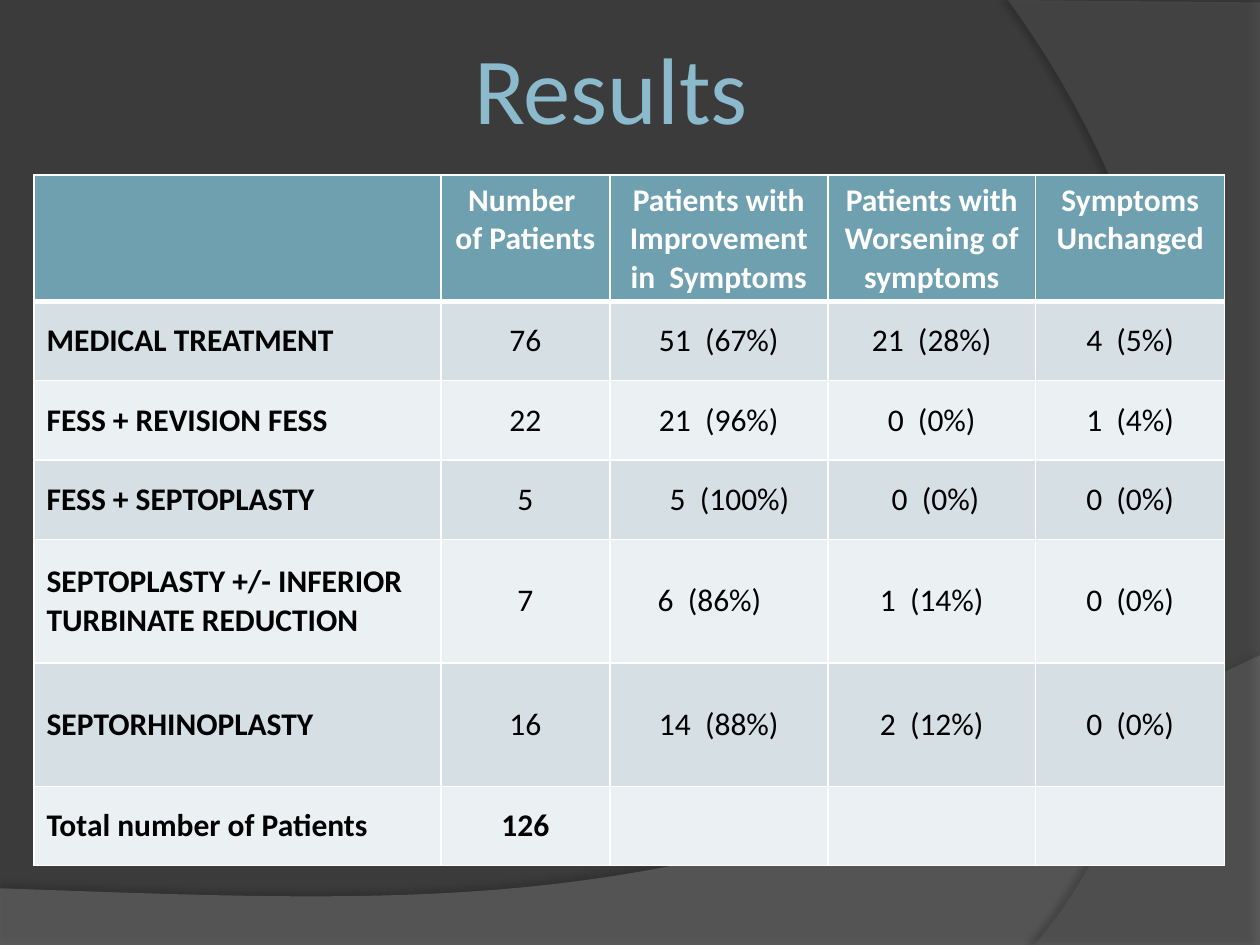
from dataclasses import dataclass

from lxml import etree
from pptx import Presentation
from pptx import util as u
from pptx.dml import color
from pptx.enum import text
from pptx.oxml import ns

BACKGROUND = color.RGBColor(0x3B, 0x3B, 0x3B)
WAVE_GRAY = color.RGBColor(0x7F, 0x7F, 0x7F)
ARC_GRAY = color.RGBColor(0x5E, 0x5E, 0x5E)
TITLE_BLUE = color.RGBColor(0x8A, 0xBA, 0xCB)
HEADER_TEAL = color.RGBColor(0x6E, 0xA0, 0xB0)
BAND_DARK = color.RGBColor(0xD5, 0xDF, 0xE4)
BAND_LIGHT = color.RGBColor(0xEB, 0xF0, 0xF2)
WHITE = color.RGBColor(0xFF, 0xFF, 0xFF)
BLACK = color.RGBColor(0, 0, 0)

CENTER, LEFT = text.PP_ALIGN.CENTER, text.PP_ALIGN.LEFT
CURVE_STEPS = 60
COLUMN_WIDTHS = (3.23, 1.34, 1.73, 1.65, 1.5)
ROW_HEIGHTS = (1, 0.63, 0.63, 0.63, 0.98, 0.98, 0.63)
ROWS = (
    ("", "Number \nof Patients", "Patients with Improvement in  Symptoms",
     "Patients with Worsening of symptoms", "Symptoms Unchanged"),
    ("MEDICAL TREATMENT", "76", "51  (67%)", "21  (28%)", "4  (5%)"),
    ("FESS + REVISION FESS", "22", "21  (96%)", "0  (0%)", "1  (4%)"),
    ("FESS + SEPTOPLASTY", "5", "5  (100%)", "0  (0%)", "0  (0%)"),
    ("SEPTOPLASTY +/- INFERIOR TURBINATE REDUCTION", "7", "6  (86%)", "1  (14%)", "0  (0%)"),
    ("SEPTORHINOPLASTY", "16", "14  (88%)", "2  (12%)", "0  (0%)"),
    ("Total number of Patients", "126", "", "", ""),
)
INDENTS = {(3, 2): 0.17, (3, 3): 0.06, (4, 2): 0.28}
LEFT_ALIGNED = {(4, 2)}

Point = tuple[float, float]


@dataclass
class Swoosh:
    corners: list[Point]
    curve: tuple[Point, Point, Point]
    fill: color.RGBColor
    opacity: int
    shadow_opacity: int
    shadow_distance: float
    shadow_angle: int


SWOOSHES = (
    Swoosh([(0, 7.05), (0, 7.51), (10, 7.51), (10, 5.2)],
           ((5.59, 7.29), (3.91, 7.19), (0, 7.05)), WAVE_GRAY, 45, 35, 3.5, 270),
    Swoosh([(10, 0.02), (10, 7.5), (8.21, 7.5)],
           ((9.35, 6.19), (10.18, 3), (8, 0)), ARC_GRAY, 40, 45, 4, 180),
)


def add_node(parent, tag: str, **attributes):
    node = etree.SubElement(parent, ns.qn(tag))
    for name, value in attributes.items():
        node.set(name, str(value))
    return node


def curve_points(start: Point, curve: tuple[Point, Point, Point]) -> list[Point]:
    points = []
    for step in range(1, CURVE_STEPS + 1):
        t = step / CURVE_STEPS
        weights = ((1 - t) ** 3, 3 * t * (1 - t) ** 2, 3 * t * t * (1 - t), t ** 3)
        controls = (start, *curve)
        points.append(tuple(sum(w * c[axis] for w, c in zip(weights, controls))
                            for axis in (0, 1)))
    return points


def draw_swoosh(page, swoosh: Swoosh) -> None:
    outline = swoosh.corners + curve_points(swoosh.corners[-1], swoosh.curve)
    first, *others = [(u.Inches(x), u.Inches(y)) for x, y in outline]
    builder = page.shapes.build_freeform(*first, scale=1.0)
    builder.add_line_segments(others, close=True)
    shape = builder.convert_to_shape()
    shape.fill.solid()
    shape.fill.fore_color.rgb = swoosh.fill
    shape.line.fill.background()
    shape.shadow.inherit = False
    properties = shape._element.spPr
    fill_color = properties.find(ns.qn("a:solidFill"))[0]
    add_node(fill_color, "a:alpha", val=swoosh.opacity * 1000)
    shadow = add_node(properties.find(ns.qn("a:effectLst")), "a:outerShdw",
                      blurRad=u.Pt(4), dist=u.Pt(swoosh.shadow_distance),
                      dir=swoosh.shadow_angle * 60000, algn="ctr", rotWithShape=0)
    shadow_color = add_node(shadow, "a:srgbClr", val="000000")
    add_node(shadow_color, "a:alpha", val=swoosh.shadow_opacity * 1000)


def style_paragraphs(frame, alignment, indent: float, rgb: color.RGBColor, font: dict) -> None:
    for para in frame.paragraphs:
        para.alignment = alignment
        if indent:
            para._p.get_or_add_pPr().set("marL", str(u.Inches(indent)))
        for span in para.runs:
            for name, value in font.items():
                setattr(span.font, name, value)
            span.font.color.rgb = rgb


def draw_title(page) -> None:
    box = page.shapes.add_textbox(u.Inches(0.5), u.Inches(0.3), u.Inches(8.17), u.Inches(0.77))
    frame = box.text_frame
    layout = {"word_wrap": True, "vertical_anchor": text.MSO_ANCHOR.MIDDLE,
              "margin_left": u.Inches(0.05), "margin_right": u.Inches(0.05)}
    for name, value in layout.items():
        setattr(frame, name, value)
    frame.text = "Results"
    style_paragraphs(frame, CENTER, 0.53, TITLE_BLUE, {"name": "Calibri", "size": u.Pt(54)})


def add_borders(cell, top: float, bottom: float) -> None:
    properties = cell._tc.get_or_add_tcPr()
    widths = {"a:lnL": 1, "a:lnR": 1, "a:lnT": top, "a:lnB": bottom}
    for position, (tag, width) in enumerate(widths.items()):
        line = add_node(properties, tag, w=u.Pt(width))
        add_node(add_node(line, "a:solidFill"), "a:srgbClr", val=str(WHITE))
        properties.insert(position, line)


def draw_cell(cell, row: int, column: int, wording: str) -> None:
    header = row == 0
    cell.fill.solid()
    cell.fill.fore_color.rgb = HEADER_TEAL if header else BAND_DARK if row % 2 else BAND_LIGHT
    add_borders(cell, 3 if row == 1 else 1, 3 if header else 1)
    cell.vertical_anchor = text.MSO_ANCHOR.TOP if header else text.MSO_ANCHOR.MIDDLE
    cell.text_frame.text = wording
    bold = header or column == 0 or row == len(ROWS) - 1
    alignment = LEFT if column == 0 or (row, column) in LEFT_ALIGNED else CENTER
    style_paragraphs(cell.text_frame, alignment, INDENTS.get((row, column), 0),
                     WHITE if header else BLACK,
                     {"name": "Calibri", "size": u.Pt(18), "bold": bold})


def draw_results(page) -> None:
    table = page.shapes.add_table(
        len(ROWS), len(COLUMN_WIDTHS), u.Inches(0.27), u.Inches(1.39),
        u.Inches(sum(COLUMN_WIDTHS)), u.Inches(sum(ROW_HEIGHTS))).table
    for column, width in zip(table.columns, COLUMN_WIDTHS):
        column.width = u.Inches(width)
    for row, height in zip(table.rows, ROW_HEIGHTS):
        row.height = u.Inches(height)
    for row, wordings in enumerate(ROWS):
        for column, wording in enumerate(wordings):
            draw_cell(table.cell(row, column), row, column, wording)


def main() -> None:
    deck = Presentation()
    deck.slide_width, deck.slide_height = u.Inches(10), u.Inches(7.5)
    page = deck.slides.add_slide(deck.slide_layouts[6])
    page.background.fill.solid()
    page.background.fill.fore_color.rgb = BACKGROUND
    for swoosh in SWOOSHES:
        draw_swoosh(page, swoosh)
    draw_title(page)
    draw_results(page)
    deck.save("out.pptx")


if __name__ == "__main__":
    main()
